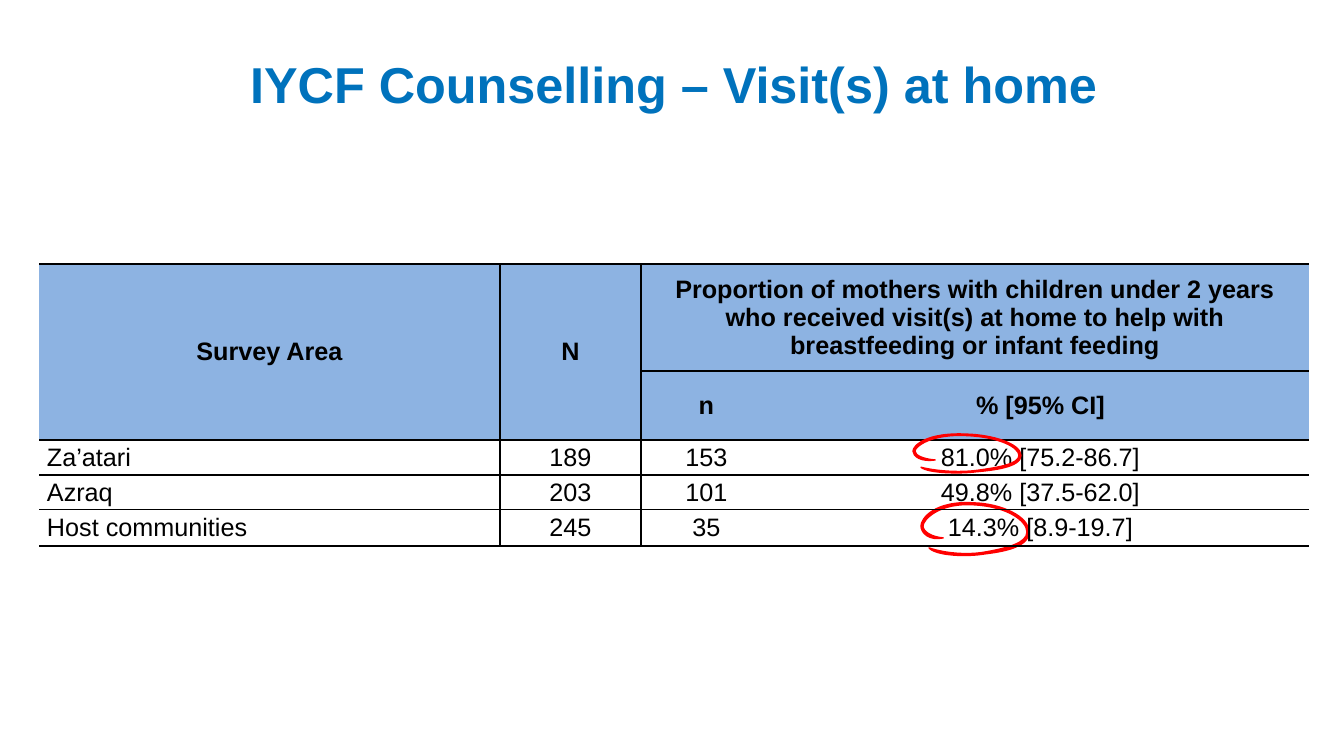
from lxml import etree
from pptx import Presentation
from pptx import util as u
from pptx.dml.color import RGBColor
from pptx.enum import text
from pptx.oxml.ns import qn

PX = u.Inches(1) / 100.8
THEME = {
    "font": "Arial",
    "title": RGBColor.from_string("0072BC"),
    "ink": RGBColor.from_string("000000"),
    "header": RGBColor.from_string("8DB3E2"),
    "mark": RGBColor.from_string("FF0000"),
    "title_size": 36,
    "table_size": 18,
}
CENTER, LEFT = text.PP_ALIGN.CENTER, text.PP_ALIGN.LEFT

# Hand-drawn loop on a 107 by 57 grid: a start, then three points per cubic curve
LOOP_WIDTH, LOOP_HEIGHT = 107, 57
LOOP_POINTS = [
    (8, 48),
    (26, 54), (48, 55), (64, 52),
    (86, 48), (105, 43), (105, 32),
    (105, 21), (86, 7), (54, 5),
    (18, 2), (2, 20), (2, 26),
    (2, 32), (11, 37), (22, 38),
    (8, 41), (0, 33), (0, 26),
    (0, 19), (13, 0), (54, 3),
    (79, 4), (107, 16), (107, 32),
    (107, 48), (79, 52), (63, 54),
    (46, 57), (15, 56), (8, 48),
]


def px(length):
    return u.Emu(round(length * PX))


def write(box, words, *, size, color, bold=False, align=CENTER,
          anchor=text.MSO_ANCHOR.MIDDLE, side=0, spacing=None):
    """Fill a text frame or a table cell with one formatted paragraph."""
    box.margin_left = box.margin_right = px(side)
    box.margin_top = box.margin_bottom = 0
    box.vertical_anchor = anchor
    frame = getattr(box, "text_frame", box)
    frame.word_wrap = True
    paragraph = frame.paragraphs[0]
    paragraph.alignment = align
    paragraph.line_spacing = spacing
    run = paragraph.add_run()
    run.text = words
    run.font.name = THEME["font"]
    run.font.size = u.Pt(size)
    run.font.bold = bold
    run.font.color.rgb = color


presentation = Presentation()
presentation.slide_width, presentation.slide_height = px(1344), px(756)
slide = presentation.slides.add_slide(presentation.slide_layouts[5])

title = slide.shapes.title
title.left, title.top, title.width, title.height = px(30), px(30), px(1288), px(84)
title.text_frame.auto_size = text.MSO_AUTO_SIZE.NONE
write(title.text_frame, "IYCF Counselling – Visit(s) at home", size=THEME["title_size"],
      color=THEME["title"], bold=True, anchor=text.MSO_ANCHOR.BOTTOM, spacing=0.9)

# Loops around the lowest and highest percentages
for left, top, width, height in [(921, 500, 108, 57), (913, 432, 108, 42)]:
    points = [(px(left + x * width / LOOP_WIDTH), px(top + y * height / LOOP_HEIGHT))
              for x, y in LOOP_POINTS]
    builder = slide.shapes.build_freeform(*points[0])
    builder.add_line_segments(points[1:], close=True)
    loop = builder.convert_to_shape()
    segments = list(loop._element.iter(qn("a:lnTo")))
    for first, second, end in zip(segments[::3], segments[1::3], segments[2::3]):
        curve = etree.Element(qn("a:cubicBezTo"))
        first.addprevious(curve)
        for segment in (first, second, end):
            curve.append(segment[0])
            segment.getparent().remove(segment)
    loop.shadow.inherit = False
    loop.fill.solid()
    loop.fill.fore_color.rgb = THEME["mark"]
    loop.line.color.rgb = THEME["mark"]
    loop.line.width = u.Pt(1)

# Survey table
rows = [
    ["Survey Area", "N", "Proportion of mothers with children under 2 years who received "
     "visit(s) at home to help with breastfeeding or infant feeding", ""],
    ["", "", "n", "% [95% CI]"],
    ["Za’atari", "189", "153", "81.0% [75.2-86.7]"],
    ["Azraq", "203", "101", "49.8% [37.5-62.0]"],
    ["Host communities", "245", "35", "14.3% [8.9-19.7]"],
]
column_widths = [461, 141, 131, 537]
row_heights = [107, 69, 35, 35, 36]
vertical_rules = [0, 1, 1, 0, 0]
horizontal_rules = [1.5, 1, 1.5, 1, 1, 1.5]
header_rows = 2

table_frame = slide.shapes.add_table(len(rows), len(column_widths), px(39), px(264),
                                     px(sum(column_widths)), px(sum(row_heights)))
table = table_frame.table
table.first_row = table.horz_banding = False
for column, width in zip(table.columns, column_widths):
    column.width = px(width)
for row, height in zip(table.rows, row_heights):
    row.height = px(height)
for column_index in (0, 1):
    table.cell(0, column_index).merge(table.cell(1, column_index))
table.cell(0, 2).merge(table.cell(0, 3))

for row_index, row in enumerate(rows):
    is_header = row_index < header_rows
    for column_index, words in enumerate(row):
        cell = table.cell(row_index, column_index)
        if words:
            write(cell, words, size=THEME["table_size"], color=THEME["ink"], bold=is_header,
                  align=CENTER if is_header or column_index else LEFT, side=8)
        tall = is_header and column_index < 2
        borders = {
            "a:lnL": vertical_rules[column_index],
            "a:lnR": vertical_rules[column_index + 1],
            "a:lnT": 0 if tall and row_index == 1 else horizontal_rules[row_index],
            "a:lnB": 0 if tall and row_index == 0 else horizontal_rules[row_index + 1],
        }
        properties = cell._tc.get_or_add_tcPr()
        for tag, points in borders.items():
            line = etree.SubElement(properties, qn(tag), w=str(u.Pt(points)))
            if points:
                solid = etree.SubElement(line, qn("a:solidFill"))
                etree.SubElement(solid, qn("a:srgbClr"), val=str(THEME["ink"]))
            else:
                etree.SubElement(line, qn("a:noFill"))
        if is_header:
            cell.fill.solid()
            cell.fill.fore_color.rgb = THEME["header"]
        else:
            cell.fill.background()

# The first loop stays behind the table, the second lies over it
upper_loop = loop._element
table_frame._element.addnext(upper_loop)

presentation.save("out.pptx")
